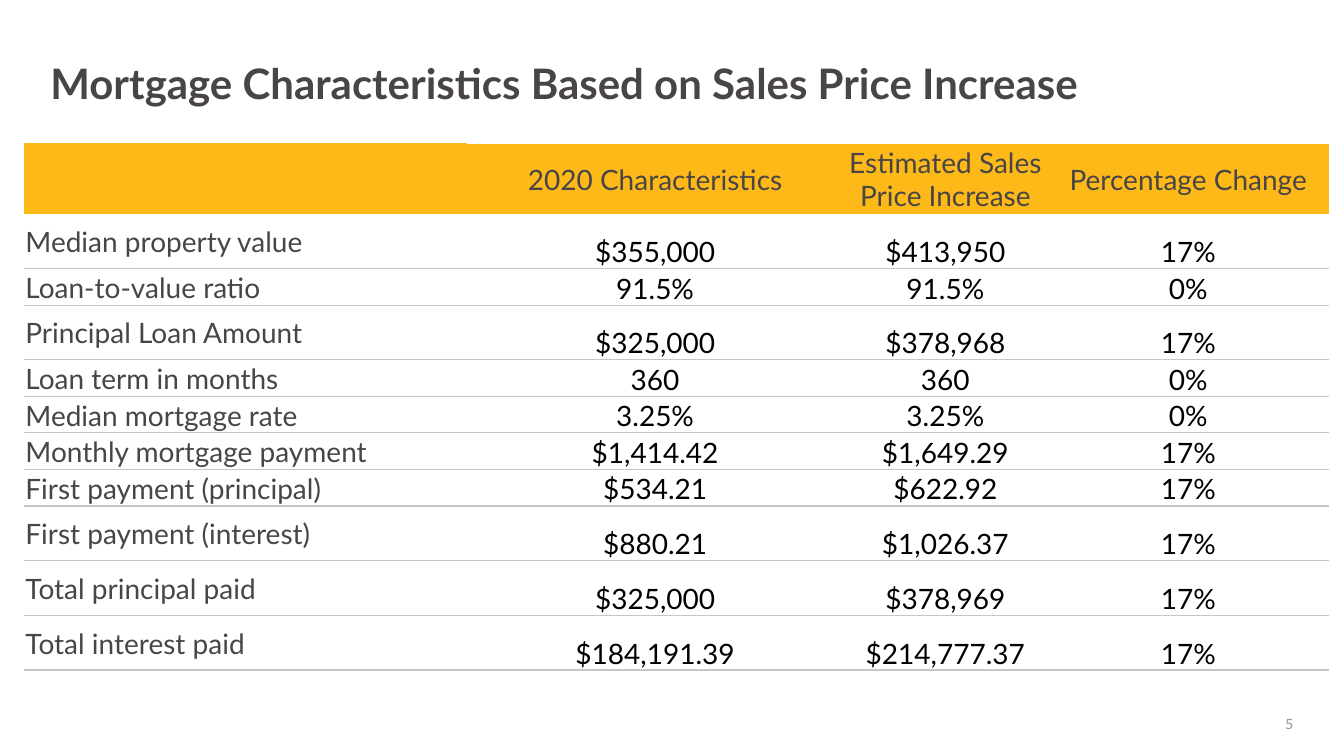
"""Build a slide with a table of mortgage characteristics before and after a price increase."""
from lxml.etree import SubElement
from pptx import Presentation
from pptx.dml.color import RGBColor
from pptx.enum.text import MSO_ANCHOR, MSO_AUTO_SIZE, PP_ALIGN
from pptx.oxml.ns import qn
from pptx.util import Cm, Pt

GREY, BLACK, WHITE, YELLOW, RULE = "494546", "000000", "FFFFFF", "FCB918", "C6C6C6"
HEADER = ["", "2020 Characteristics", "Estimated Sales Price Increase", "Percentage Change"]
ROWS = [
    ["Median property value", "$355,000", "$413,950", "17%"],
    ["Loan-to-value ratio", "91.5%", "91.5%", "0%"],
    ["Principal Loan Amount", "$325,000", "$378,968", "17%"],
    ["Loan term in months", "360", "360", "0%"],
    ["Median mortgage rate", "3.25%", "3.25%", "0%"],
    ["Monthly mortgage payment", "$1,414.42", "$1,649.29", "17%"],
    ["First payment (principal)", "$534.21", "$622.92", "17%"],
    ["First payment (interest)", "$880.21", "$1,026.37", "17%"],
    ["Total principal paid", "$325,000", "$378,969", "17%"],
    ["Total interest paid", "$184,191.39", "$214,777.37", "17%"],
]
COLUMN_WIDTHS = [11.15, 9.5, 5.13, 7.11]
TALL, SHORT = 1.38, 0.92
ROW_HEIGHTS = [1.78, TALL, SHORT, TALL, SHORT, SHORT, SHORT, SHORT, TALL, TALL, TALL]


def style_text(paragraph, size, color, alignment, bold=False):
    paragraph.alignment = alignment
    paragraph.font.name = "Lato"
    paragraph.font.size = Pt(size)
    paragraph.font.bold = bold
    paragraph.font.color.rgb = RGBColor.from_string(color)


def add_border(cell, side, color=None):
    line = SubElement(cell._tc.get_or_add_tcPr(), qn(f"a:ln{side}"), w=str(Pt(1)))
    if color:
        SubElement(SubElement(line, qn("a:solidFill")), qn("a:srgbClr"), val=color)
    else:
        SubElement(line, qn("a:noFill"))


presentation = Presentation()
presentation.slide_width = Cm(33.87)
presentation.slide_height = Cm(19.05)
slide = presentation.slides.add_slide(presentation.slide_layouts[5])

title = slide.shapes.title
title.left, title.top, title.width, title.height = Cm(1.27), Cm(1.47), Cm(31.32), Cm(3.23)
title_frame = title.text_frame
title_frame.text = "Mortgage Characteristics Based on Sales Price Increase"
title_frame.auto_size = MSO_AUTO_SIZE.NONE
title_frame.vertical_anchor = MSO_ANCHOR.TOP
title_frame.margin_left = title_frame.margin_right = 0
title_frame.paragraphs[0].line_spacing = 0.9
style_text(title_frame.paragraphs[0], 30, GREY, PP_ALIGN.LEFT, bold=True)

table = slide.shapes.add_table(
    len(ROW_HEIGHTS), len(COLUMN_WIDTHS), Cm(0.61), Cm(3.61),
    Cm(sum(COLUMN_WIDTHS)), Cm(sum(ROW_HEIGHTS))).table
table.first_row = table.horz_banding = False
for column, width in zip(table.columns, COLUMN_WIDTHS):
    column.width = Cm(width)
for row, height in zip(table.rows, ROW_HEIGHTS):
    row.height = Cm(height)

for row_index, texts in enumerate([HEADER] + ROWS):
    for column_index, text in enumerate(texts):
        cell = table.cell(row_index, column_index)
        is_header, is_label = row_index == 0, column_index == 0
        cell.text = text
        cell.margin_left = cell.margin_right = cell.margin_top = Cm(0.03)
        cell.margin_bottom = 0
        cell.vertical_anchor = MSO_ANCHOR.MIDDLE if is_header or is_label else MSO_ANCHOR.BOTTOM
        style_text(cell.text_frame.paragraphs[0], 20,
                   GREY if is_header or is_label else BLACK,
                   PP_ALIGN.LEFT if is_label else PP_ALIGN.CENTER)
        add_border(cell, "L")
        add_border(cell, "R")
        if is_header:
            add_border(cell, "T", None if is_label else WHITE)
            add_border(cell, "B")
            cell.fill.solid()
            cell.fill.fore_color.rgb = RGBColor.from_string(YELLOW)
        else:
            add_border(cell, "T", RULE if row_index > 1 else None)
            add_border(cell, "B", RULE)
            cell.fill.background()

number_frame = slide.shapes.add_textbox(Cm(24.97), Cm(17.96), Cm(7.62), Cm(0.58)).text_frame
number_frame.word_wrap = True
number_frame.vertical_anchor = MSO_ANCHOR.MIDDLE
number_frame.margin_left = number_frame.margin_right = 0
number_frame.margin_top = number_frame.margin_bottom = 0
number_frame.text = "5"
style_text(number_frame.paragraphs[0], 10, "959494", PP_ALIGN.RIGHT)

presentation.save("out.pptx")
